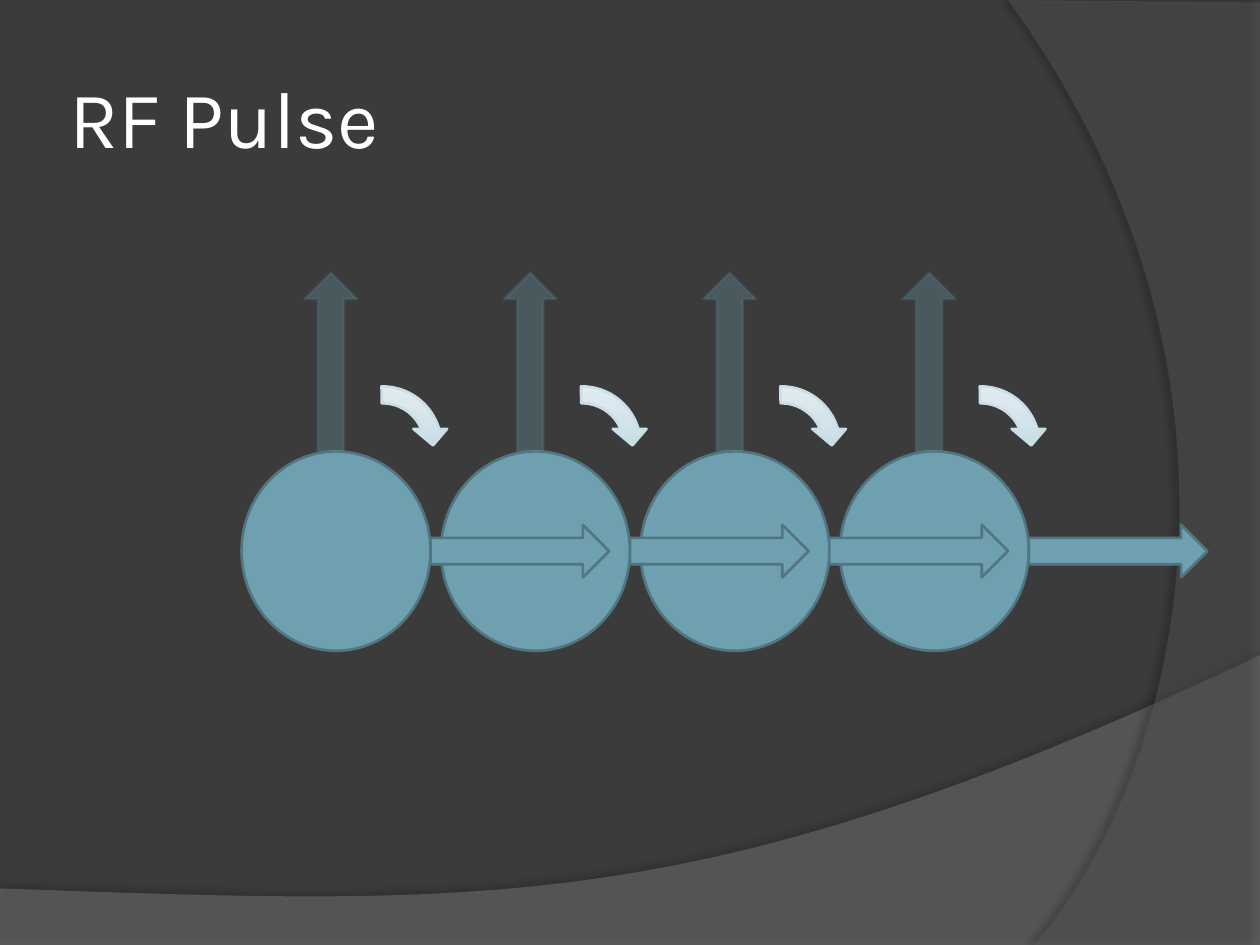
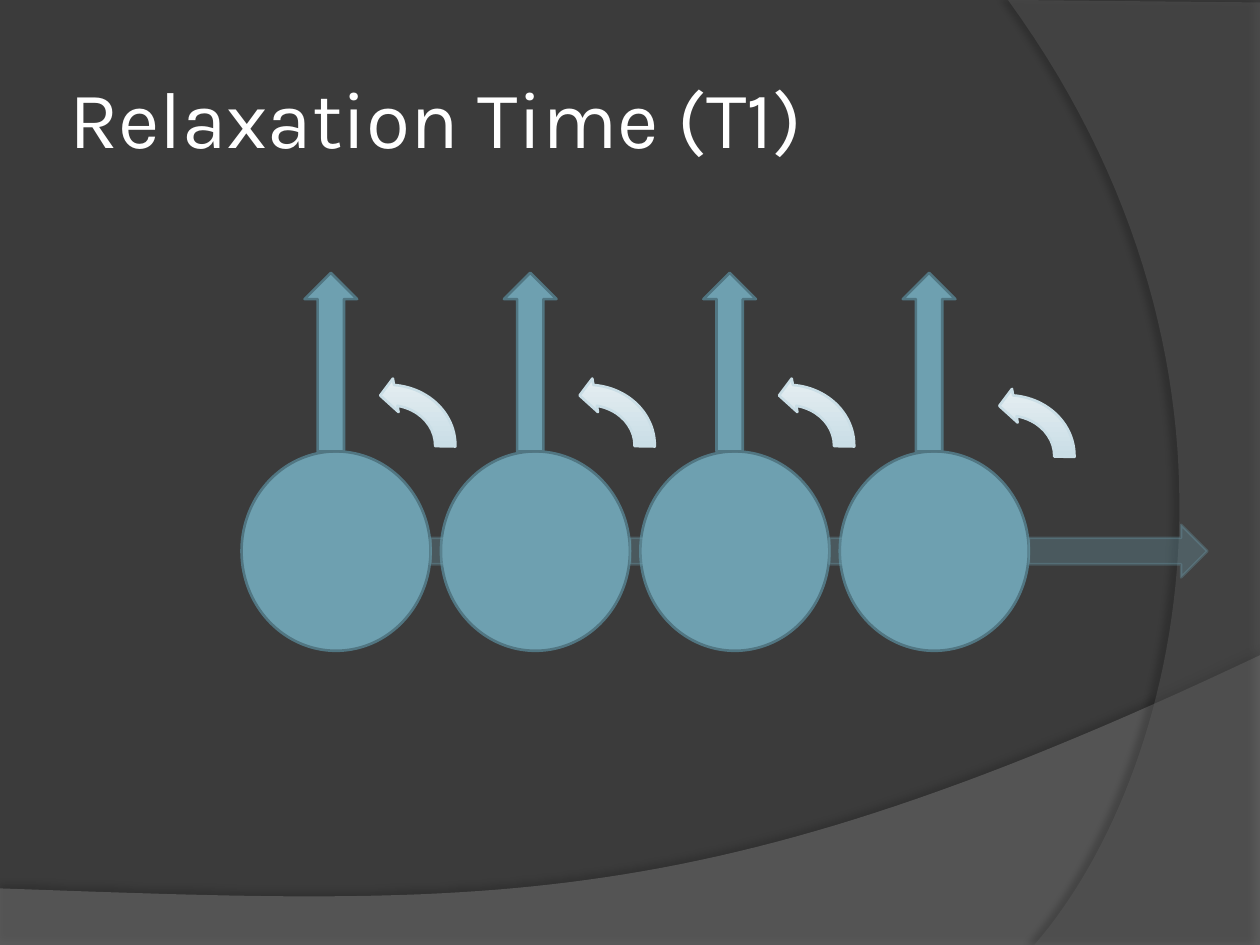
from copy import deepcopy
from dataclasses import dataclass

from lxml.etree import SubElement
from pptx import Presentation
from pptx.dml.color import RGBColor
from pptx.enum.shapes import MSO_SHAPE
from pptx.enum.text import MSO_ANCHOR
from pptx.oxml.ns import qn
from pptx.util import Cm, Pt


@dataclass(frozen=True)
class Theme:
    background: str = "3B3B3B"
    floor: str = "7F7F7F"
    side: str = "5E5E5E"
    shadow: str = "000000"
    title: str = "FFFFFF"
    proton: str = "6EA0B0"
    edge: str = "517682"
    turn: tuple = ("A9CBD8", "CADEE6", "E5EEF2")
    font: str = "Karla"
    title_size: int = 46
    line: float = 1.5
    faded: int = 30


THEME = Theme()
WIDTH, HEIGHT = 25.4, 19.05
COUNT, PITCH = 4, 4.02


def rgb(color):
    return RGBColor.from_string(color)


def set_alpha(parent, percent):
    for clr in parent.iter(qn("a:srgbClr")):
        SubElement(clr, qn("a:alpha"), val=str(percent * 1000))


def paint(sp, fill, line=None, alpha=100):
    sp.shadow.inherit = False
    sp.fill.solid()
    sp.fill.fore_color.rgb = rgb(fill)
    if line:
        sp.line.color.rgb = rgb(line)
        sp.line.width = Pt(THEME.line)
    else:
        sp.line.fill.background()
    if alpha < 100:
        set_alpha(sp._element.spPr, alpha)


def paint_gradient(sp, colors):
    sp.shadow.inherit = False
    sp.fill.gradient()
    sp.fill.gradient_angle = 90
    stops = sp._element.spPr.find(qn("a:gradFill")).find(qn("a:gsLst"))
    stops.insert(1, deepcopy(stops[0]))
    for i, (stop, color) in enumerate(zip(sp.fill.gradient_stops, colors)):
        stop.color.rgb = rgb(color)
        stop.position = i / (len(colors) - 1)
    sp.line.color.rgb = rgb(colors[1])
    sp.line.width = Pt(THEME.line)


def add_shadow(sp, alpha, blur, dist, angle):
    effects = sp._element.spPr.find(qn("a:effectLst"))
    shadow = SubElement(effects, qn("a:outerShdw"), blurRad=str(Pt(blur)),
                        dist=str(Pt(dist)), dir=str(angle * 60000),
                        algn="ctr", rotWithShape="0")
    SubElement(shadow, qn("a:srgbClr"), val=THEME.shadow)
    set_alpha(shadow, alpha)


def bezier(p0, p1, p2, p3, steps=60):
    for i in range(steps + 1):
        t = i / steps
        u = 1 - t
        yield tuple(u**3 * a + 3 * u * u * t * b + 3 * u * t * t * c + t**3 * d
                    for a, b, c, d in zip(p0, p1, p2, p3))


def add_band(s, left, top, corners, curve, fill, alpha, shadow):
    points = [(Cm(left + x), Cm(top + y)) for x, y in [*corners, *bezier(*curve)]]
    builder = s.shapes.build_freeform(*points[0], scale=1.0)
    builder.add_line_segments(points[1:], close=True)
    sp = builder.convert_to_shape()
    paint(sp, fill, alpha=alpha)
    add_shadow(sp, *shadow)


def add_backdrop(s):
    s.background.fill.solid()
    s.background.fill.fore_color.rgb = rgb(THEME.background)
    add_band(s, 0, 13.21, [(0, 5.84), (WIDTH, 5.84)],
             [(WIDTH, 0), (14.2, 5.31), (9.93, 5.05), (0, 4.7)],
             THEME.floor, 45, (35, 4, 3.5, 270))
    add_band(s, 20.32, 0, [(5.08, 0.05), (5.08, HEIGHT)],
             [(0.53, HEIGHT), (3.43, 15.72), (5.54, 7.62), (0, 0)],
             THEME.side, 40, (45, 4, 4, 180))


def add_title(s, text, left, top, width, height):
    tf = s.shapes.add_textbox(Cm(left), Cm(top), Cm(width), Cm(height)).text_frame
    tf.word_wrap = True
    tf.vertical_anchor = MSO_ANCHOR.MIDDLE
    tf.margin_left = tf.margin_right = tf.margin_top = tf.margin_bottom = Cm(0.13)
    r = tf.paragraphs[0].add_run()
    r.text = text
    r.font.name = THEME.font
    r.font.size = Pt(THEME.title_size)
    r.font.color.rgb = rgb(THEME.title)


def add_row(s, kind, left, top, width, height):
    return [s.shapes.add_shape(kind, Cm(left + i * PITCH), Cm(top), Cm(width), Cm(height))
            for i in range(COUNT)]


def add_protons(s, left, top, up_alpha, across_alpha, across_edge):
    for sp in add_row(s, MSO_SHAPE.OVAL, left, top + 3.6, 3.81, 4.02):
        paint(sp, THEME.proton, THEME.edge)
    for sp in add_row(s, MSO_SHAPE.UP_ARROW, left + 1.27, top, 1.06, 3.6):
        paint(sp, THEME.proton, THEME.edge, up_alpha)
    for sp in add_row(s, MSO_SHAPE.UP_ARROW, left + 5.08, top + 3.81, 1.06, 3.6):
        sp.rotation = 90
        paint(sp, THEME.proton, across_edge, across_alpha)


def add_turns(s, left, top, width, adjustments, flip=False):
    turns = add_row(s, MSO_SHAPE.CIRCULAR_ARROW, left, top, width, 2.72)
    for sp in turns:
        for i, value in enumerate(adjustments):
            sp.adjustments[i] = value
        if flip:
            sp._element.spPr.find(qn("a:xfrm")).set("flipH", "1")
        paint_gradient(sp, THEME.turn)
    return turns


def new_slide(prs, title):
    s = prs.slides.add_slide(prs.slide_layouts[6])
    add_backdrop(s)
    add_title(s, title, 1.27, 0.76, 20.75, 3.18)
    return s


def add_pulse_slide(prs, left, top):
    s = new_slide(prs, "RF Pulse")
    add_protons(s, left, top, THEME.faded, 100, THEME.edge)
    add_turns(s, left + 1.48, top + 2.12, 2.72, (0.125, 11.42, 204.58, 161.49, 0.125))


def add_relaxation_slide(prs, left, top):
    s = new_slide(prs, "Relaxation Time (T1)")
    add_protons(s, left, top, 100, THEME.faded, THEME.proton)
    turns = add_turns(s, left + 1.48, top + 2.12, 2.97,
                      (0.15, 10.59, 157.14, 107.45, 0.126), flip=True)
    turns[-1].left += Cm(0.42)
    turns[-1].top += Cm(0.21)


def main():
    prs = Presentation()
    prs.slide_width, prs.slide_height = Cm(WIDTH), Cm(HEIGHT)
    add_pulse_slide(prs, 4.87, 5.5)
    add_relaxation_slide(prs, 4.87, 5.5)
    prs.save("out.pptx")


if __name__ == "__main__":
    main()
